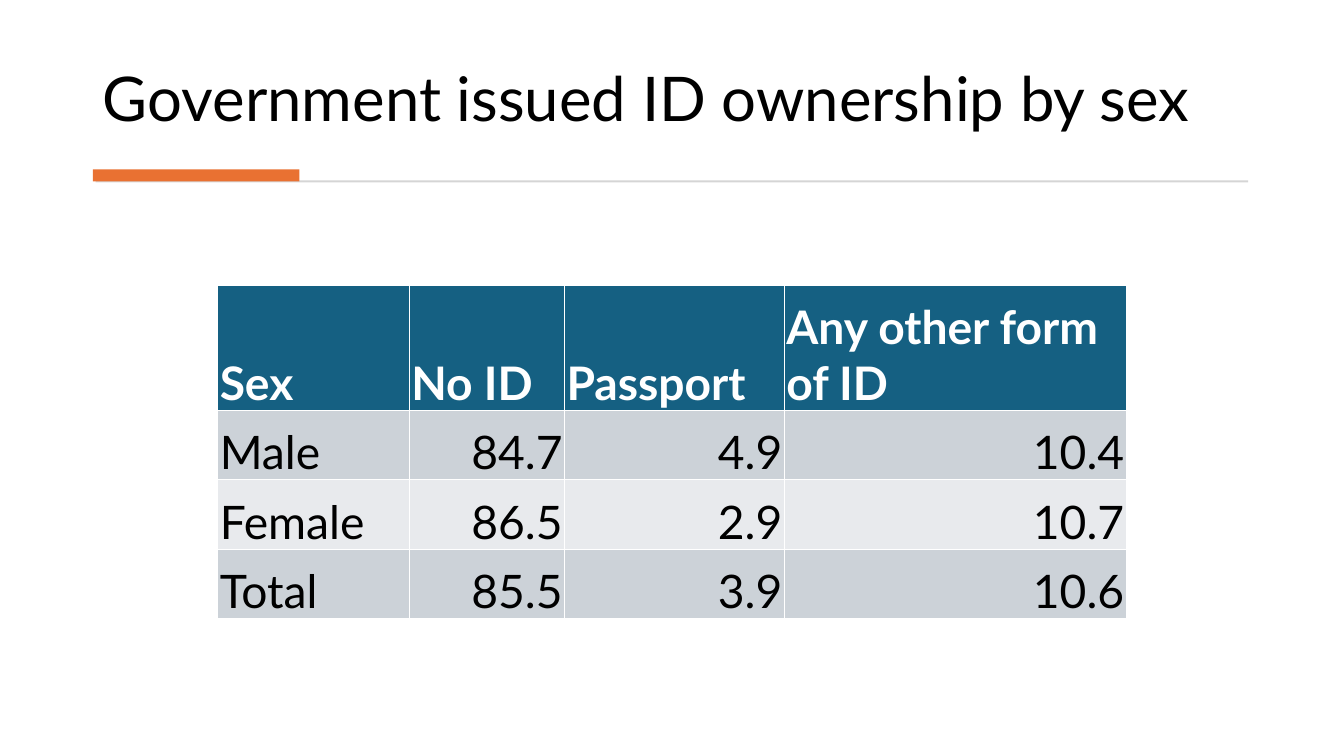
from pptx import Presentation
from pptx.dml.color import RGBColor
from pptx.enum import shapes, text
from pptx.util import Inches, Pt

FONT = "Lato"
COLORS = {"black": "000000", "white": "FFFFFF", "header": "156082",
          "odd": "CCD2D8", "even": "E8EAED", "rule": "D5D5D5", "accent": "E97132"}


def rgb(name):
    return RGBColor.from_string(COLORS[name])


def style_text(p, size, color, bold=False):
    """Format the font of a whole paragraph's runs."""
    for r in p.runs:
        for name, value in {"name": FONT, "size": Pt(size), "bold": bold}.items():
            setattr(r.font, name, value)
        r.font.color.rgb = rgb(color)


prs = Presentation()
prs.slide_width, prs.slide_height = Inches(13.33), Inches(7.5)
s = prs.slides.add_slide(prs.slide_layouts[5])

# Title
title = s.shapes.title
title.left, title.top, title.width, title.height = map(Inches, (0.92, 0.28, 11.49, 1.11))
tf = title.text_frame
tf.text = "Government issued ID ownership by sex"
tf.word_wrap = True
tf.auto_size = text.MSO_AUTO_SIZE.NONE
tf.vertical_anchor = text.MSO_ANCHOR.BOTTOM
p = tf.paragraphs[0]
p.alignment = text.PP_ALIGN.LEFT
p.line_spacing = 0.9
style_text(p, 44, "black")

# Thin rule with its accent bar
for color, box in (("rule", (0.95, 1.79, 11.43, 0.02)), ("accent", (0.92, 1.68, 2.05, 0.12))):
    sp = s.shapes.add_shape(shapes.MSO_SHAPE.RECTANGLE, *map(Inches, box))
    sp.shadow.inherit = False
    sp.fill.solid()
    sp.fill.fore_color.rgb = rgb(color)
    sp.line.fill.background()

# Ownership table
rows = [
    ("Sex", "No ID", "Passport", "Any other form of ID"),
    ("Male", "84.7", "4.9", "10.4"),
    ("Female", "86.5", "2.9", "10.7"),
    ("Total", "85.5", "3.9", "10.6"),
]
col_widths = (1.9, 1.54, 2.18, 3.39)
row_heights = (1.24, 0.69, 0.69, 0.69)
cell_format = {"margin_left": Inches(0.02), "margin_right": Inches(0.02),
               "margin_top": Inches(0.02), "margin_bottom": 0,
               "vertical_anchor": text.MSO_ANCHOR.BOTTOM}

table = s.shapes.add_table(len(rows), len(col_widths), Inches(2.16), Inches(2.83),
                           Inches(sum(col_widths)), Inches(sum(row_heights))).table
for column, width in zip(table.columns, col_widths):
    column.width = Inches(width)
for i, values in enumerate(rows):
    table.rows[i].height = Inches(row_heights[i])
    header = i == 0
    fill = "header" if header else ("odd" if i % 2 else "even")
    for j, value in enumerate(values):
        cell = table.cell(i, j)
        for name, setting in cell_format.items():
            setattr(cell, name, setting)
        cell.fill.solid()
        cell.fill.fore_color.rgb = rgb(fill)
        cell.text = value
        p = cell.text_frame.paragraphs[0]
        p.alignment = text.PP_ALIGN.LEFT if header or j == 0 else text.PP_ALIGN.RIGHT
        style_text(p, 33, "white" if header else "black", bold=header)

prs.save("out.pptx")
